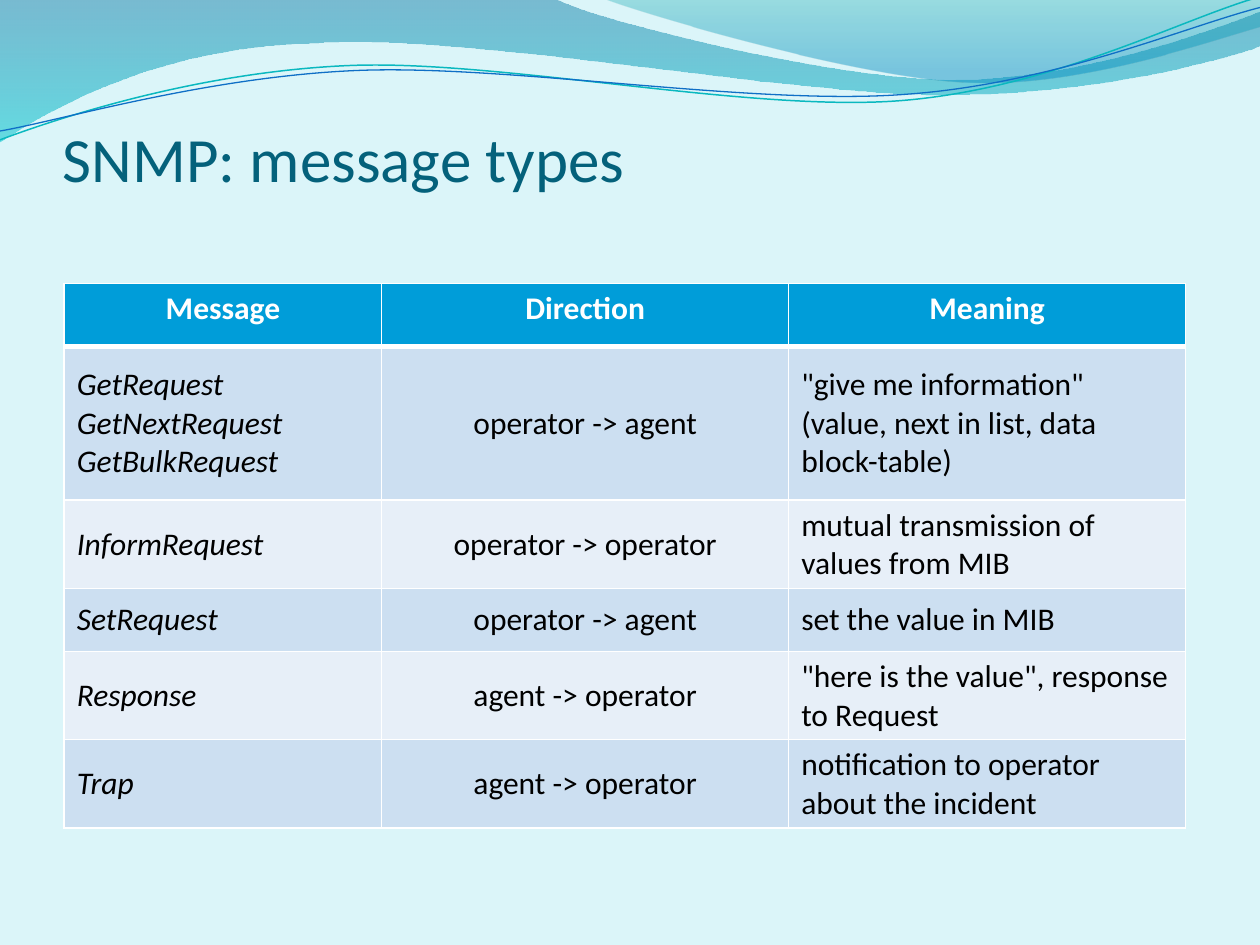
from math import cos, radians, sin

from lxml.etree import SubElement
from pptx import Presentation
from pptx.dml.color import RGBColor
from pptx.enum.text import MSO_ANCHOR, PP_ALIGN
from pptx.oxml.ns import qn
from pptx.util import Inches, Pt

BACKGROUND = RGBColor(0xDB, 0xF5, 0xF9)
TITLE = RGBColor(0x04, 0x61, 0x7B)
HEADER = RGBColor(0x00, 0x9D, 0xD9)
BAND_DARK = RGBColor(0xCC, 0xDF, 0xF1)
BAND_LIGHT = RGBColor(0xE7, 0xEF, 0xF8)
WHITE = RGBColor(0xFF, 0xFF, 0xFF)
BLACK = RGBColor(0x00, 0x00, 0x00)
DEEP_BLUE = RGBColor(0x00, 0x74, 0xA1)
AQUA = RGBColor(0x00, 0xC6, 0xCF)
TEAL = RGBColor(0x00, 0xA1, 0xA9)
SKY = RGBColor(0x00, 0x8B, 0xBF)
TEAL_LINE = RGBColor(0x0A, 0xB8, 0xBF)
BLUE_LINE = RGBColor(0x0F, 0x6F, 0xC6)

COLUMNS, ROWS = 10, 7.5
TILT = -2.7

# Outlines: a pair is a straight step, six numbers are a cubic curve
WIDE_WAVE = [(0, 0), (4.4, -0.01), (4.76, 0.17, 6.64, 0.63, 7.58, 0.63),
             (8.53, 0.63, 9.58, 0.26, 10, 0.09), (10.01, 0.36),
             (9.83, 0.44, 8.7, 0.76, 7.46, 0.75),
             (6.22, 0.75, 3.82, 0.28, 2.57, 0.34),
             (1.29, 0.36, 0.46, 0.83, -0.01, 1.13), (0, 0)]
RIGHT_WAVE = [(4.79, -0.01), (5.09, 0.11, 6.82, 0.62, 7.69, 0.65),
              (8.56, 0.69, 9.61, 0.32, 10, 0.21), (10, 0), (4.79, -0.01)]
TEAL_CURVE = [(0, 1.11), (0.48, 0.93, 1.58, 0.57, 2.77, 0.52),
              (3.95, 0.47, 5.93, 0.89, 7.13, 0.8),
              (8.33, 0.71, 9.38, 0.15, 9.98, -0.02)]
BLUE_CURVE = [(0, 1.04), (0.47, 0.96, 1.64, 0.61, 2.83, 0.56),
              (4.03, 0.51, 5.97, 0.84, 7.17, 0.75),
              (8.36, 0.67, 9.41, 0.21, 10, 0.06)]

MESSAGES = [
    ("Message", "Direction", "Meaning"),
    ("GetRequest\nGetNextRequest\nGetBulkRequest", "operator -> agent",
     '"give me information"\n(value, next in list, data block-table)'),
    ("InformRequest", "operator -> operator", "mutual transmission of values from MIB"),
    ("SetRequest", "operator -> agent", "set the value in MIB"),
    ("Response", "agent -> operator", '"here is the value", response to Request'),
    ("Trap", "agent -> operator", "notification to operator about the incident"),
]
COLUMN_WIDTHS = (2.52, 3.23, 3.15)
ROW_HEIGHTS = (0.5, 1.22, 0.5, 0.5, 0.5, 0.5)


def write(frame, text, size=18, color=BLACK, font="Calibri", bold=False,
          italic=False, align=PP_ALIGN.LEFT):
    frame.text = text
    for paragraph in frame.paragraphs:
        paragraph.alignment = align
        style = paragraph.runs[0].font
        style.name, style.size = font, Pt(size)
        style.bold, style.italic = bold, italic
        style.color.rgb = color


def turn(point, center, angle):
    """Turn a point clockwise about a center, in degrees."""
    dx, dy = point[0] - center[0], point[1] - center[1]
    c, s = cos(radians(angle)), sin(radians(angle))
    return center[0] + c * dx - s * dy, center[1] + s * dx + c * dy


class WaveSlide:
    """Style and current slide; lengths are in grid columns and rows."""

    def __init__(self, deck):
        self.slide = deck.slides.add_slide(deck.slide_layouts[6])
        self.column = deck.slide_width / COLUMNS
        self.row = deck.slide_height / ROWS
        fill = self.slide.background.fill
        fill.solid()
        fill.fore_color.rgb = BACKGROUND

    def place(self, x, y):
        return round(x * self.column), round(y * self.row)

    def outline(self, steps, close, center=(0, 0), tilt=0):
        """Draw through all points, then join each three into one cubic curve."""
        pairs = [pair for step in steps for pair in zip(step[::2], step[1::2])]
        points = [self.place(*turn(pair, center, -tilt)) for pair in pairs]
        builder = self.slide.shapes.build_freeform(*points[0])
        builder.add_line_segments(points[1:], close=close)
        shape = builder.convert_to_shape()
        shape.rotation = tilt
        shape.shadow.inherit = False
        segments = iter(list(shape._element.iter(qn("a:lnTo"))))
        for step in steps[1:]:
            segment = next(segments)
            if len(step) == 6:
                segment.tag = qn("a:cubicBezTo")
                for _ in range(2):
                    extra = next(segments)
                    segment.append(extra[0])
                    extra.getparent().remove(extra)
        return shape

    def wave(self, steps, *stops):
        """Each stop is a position, a colour and an opacity in percent."""
        shape = self.outline(steps, close=True)
        shape.line.fill.background()
        shape.fill.gradient()
        shape.fill.gradient_angle = 270
        for stop, (position, color, _) in zip(shape.fill.gradient_stops, stops):
            stop.position = position
            stop.color.rgb = color
        for tint, (_, _, opacity) in zip(shape._element.spPr.iter(qn("a:srgbClr")), stops):
            SubElement(tint, qn("a:alpha"), val=str(opacity * 1000))

    def curve(self, steps, center, color, width):
        shape = self.outline(steps, close=False, center=center, tilt=TILT)
        shape.fill.background()
        shape.line.color.rgb = color
        shape.line.width = Pt(width)

    def title(self, text, x, y, width, height):
        box = self.slide.shapes.add_textbox(*self.place(x, y), *self.place(width, height))
        frame = box.text_frame
        frame.word_wrap = True
        frame.vertical_anchor = MSO_ANCHOR.BOTTOM
        frame.margin_left = frame.margin_right = frame.margin_bottom = 0
        write(frame, text, size=36, color=TITLE)

    def border(self, cell, **widths):
        properties = cell._tc.get_or_add_tcPr()
        for side in "LRTB":
            line = SubElement(properties, qn("a:ln" + side),
                              w=str(Pt(widths.get(side, 1))))
            SubElement(SubElement(line, qn("a:solidFill")), qn("a:srgbClr"), val=str(WHITE))

    def table(self, records, x, y, width, height):
        holder = self.slide.shapes.add_table(
            len(records), len(COLUMN_WIDTHS), *self.place(x, y), *self.place(width, height))
        table = holder.table
        for column, share in zip(table.columns, COLUMN_WIDTHS):
            column.width = round(share * self.column)
        for row, share in zip(table.rows, ROW_HEIGHTS):
            row.height = round(share * self.row)
        holder.height = round(height * self.row)
        for r, record in enumerate(records):
            head = r == 0
            band = HEADER if head else BAND_DARK if r % 2 else BAND_LIGHT
            for c, text in enumerate(record):
                cell = table.cell(r, c)
                # The heavy rule under the header is shared by two rows
                self.border(cell, B=3 if head else 1, T=3 if r == 1 else 1)
                cell.fill.solid()
                cell.fill.fore_color.rgb = band
                cell.vertical_anchor = MSO_ANCHOR.TOP if head else MSO_ANCHOR.MIDDLE
                write(cell.text_frame, text, color=WHITE if head else BLACK,
                      bold=head, italic=c == 0 and not head,
                      align=PP_ALIGN.CENTER if head or c == 1 else PP_ALIGN.LEFT)


def main():
    deck = Presentation()
    deck.slide_width, deck.slide_height = Inches(10), Inches(7.5)
    page = WaveSlide(deck)

    # Wave decoration along the top
    page.wave(WIDE_WAVE, (0, DEEP_BLUE, 45), (1, AQUA, 55))
    page.wave(RIGHT_WAVE, (0, TEAL, 30), (0.8, SKY, 45))
    page.curve(TEAL_CURVE, (4.99, 0.58), TEAL_LINE, 0.85)
    page.curve(BLUE_CURVE, (5, 0.59), BLUE_LINE, 0.75)

    # Title and message table
    page.title("SNMP: message types", 0.5, 0.76, 9, 0.79)
    page.table(MESSAGES, 0.51, 2.25, 8.9, 4.31)
    deck.save("out.pptx")


if __name__ == "__main__":
    main()
